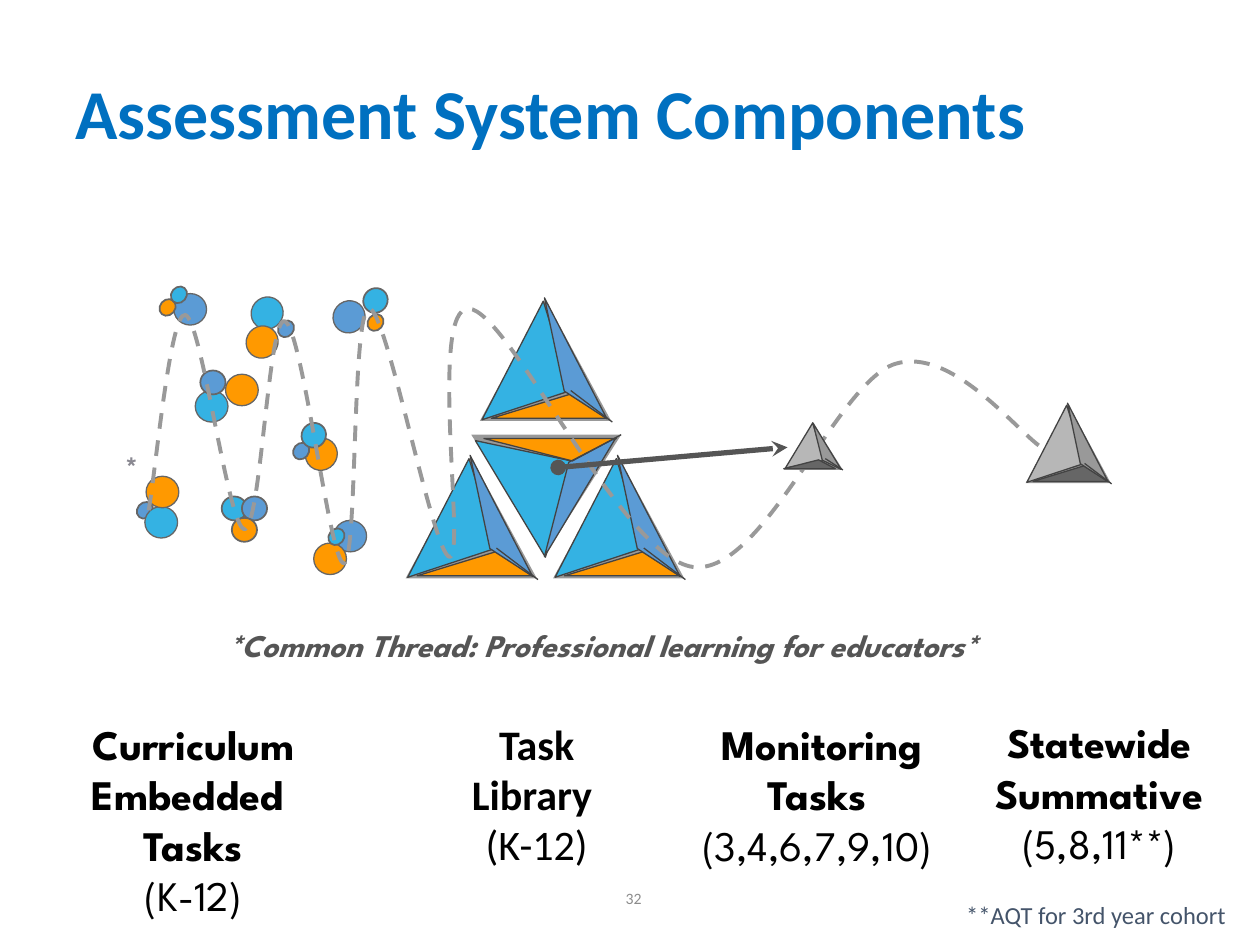
from pptx import Presentation
from pptx.dml.color import RGBColor
from pptx.enum.dml import MSO_LINE
from pptx.enum.shapes import MSO_CONNECTOR, MSO_SHAPE
from pptx.enum.text import MSO_ANCHOR, PP_ALIGN
from pptx.oxml.ns import qn
from pptx.util import Inches, Pt
from lxml.etree import SubElement

BLUE, CYAN, ORANGE = "5B9BD5", "34B2E3", "FF9900"
SILVER, GRAY, DARK, EDGE = "B7B7B7", "999999", "666666", "434343"
SPARTAN, CALIBRI = "League Spartan", "Calibri"

TITLE = "Assessment System Components"
HEADING = dict(size=24, name=SPARTAN, color="000000", bold=True)
PLAIN = dict(HEADING, bold=False)
CALIBRI_HEADING = dict(HEADING, name=CALIBRI)
CALIBRI_PLAIN = dict(PLAIN, name=CALIBRI)
THREAD = dict(size=18, name=SPARTAN, color="555555", bold=True, italic=True)
STAR = dict(size=18, name=SPARTAN, color="8A8992", bold=True)
FOOTNOTE = dict(size=14, name=CALIBRI, color="44546A")
NUMBER = dict(size=9, name=CALIBRI, color="8C8C8C")

# box, inset, alignment, paragraphs of (text, format) runs
NARROW, WIDE = (0.07, 0.04), (0.1, 0.1)
CENTER, LEFT, RIGHT = PP_ALIGN.CENTER, PP_ALIGN.LEFT, PP_ALIGN.RIGHT
TEXTS = [
    ((0.09, 5.66, 2.89, 1.79), NARROW, CENTER,
     [[("Curriculum Embedded ", HEADING)], [("Tasks", HEADING)], [("(K-12)", PLAIN)]]),
    ((3.15, 5.66, 2.22, 1.3), NARROW, CENTER,
     [[("Task", CALIBRI_HEADING)], [("Library ", CALIBRI_HEADING)],
      [("(K-12)", CALIBRI_PLAIN)]]),
    ((5.21, 5.66, 2.55, 1.79), NARROW, CENTER,
     [[(" ", CALIBRI_HEADING), ("Monitoring Tasks", HEADING)],
      [("(3,4,6,7,9,10)", PLAIN)]]),
    ((7.66, 5.65, 2.13, 1.3), NARROW, CENTER,
     [[("Statewide Summative ", HEADING), ("(5,8,11**)", PLAIN)]]),
    ((1.3, 4.93, 6.97, 0.76), NARROW, CENTER,
     [[("*Common Thread: Professional learning for educators*", THREAD)]]),
    ((0.81, 3.46, 0.47, 0.46), WIDE, CENTER, [[("*", STAR)]]),
    ((7.57, 7.04, 2.41, 0.35), WIDE, LEFT, [[("**AQT for 3rd year cohort", FOOTNOTE)]]),
    ((2.94, 6.98, 2.25, 0.35), WIDE, RIGHT, [[("32", NUMBER)]]),
]

# width, height, outline
BIG, MEDIUM, SMALL = (0.26, 0.25, 0.75), (0.2, 0.19, 1), (0.14, 0.12, 1)
UPRIGHT_DOTS = [
    (2.65, 4.13, BIG, BLUE), (2.49, 4.31, BIG, ORANGE), (1.38, 2.33, BIG, BLUE),
]
TURNED_DOTS = [
    (2.42, 3.48, BIG, ORANGE), (2.32, 3.52, SMALL, BLUE), (2.39, 3.36, MEDIUM, CYAN),
    (2.88, 2.29, MEDIUM, CYAN), (1.99, 2.36, BIG, CYAN), (1.95, 2.59, BIG, ORANGE),
    (2.64, 2.39, BIG, BLUE), (1.26, 2.38, SMALL, ORANGE), (2.2, 2.55, SMALL, BLUE),
    (1.35, 2.28, SMALL, CYAN), (2.91, 2.5, SMALL, ORANGE), (1.08, 3.99, SMALL, BLUE),
    (2.6, 4.2, SMALL, CYAN),
]
FRONT_DOTS = [
    (1.15, 4.02, BIG, CYAN), (1.16, 3.78, BIG, ORANGE), (1.76, 3.94, MEDIUM, CYAN),
    (1.92, 3.94, MEDIUM, BLUE), (1.84, 4.11, MEDIUM, ORANGE), (1.79, 2.97, BIG, ORANGE),
    (1.55, 3.1, BIG, CYAN), (1.59, 2.94, MEDIUM, BLUE),
]

# triangles: x, y, width, height, rotation, flipped, apex, role; ridge: two points
TASK_PYRAMID = dict(
    triangles=[(0, 0, 1.04, 0.96, 0, False, 0.5, "shadow"),
               (-0.04, 0.34, 1.06, 0.52, 117.3, False, 0.5, "face"),
               (0.09, 0.75, 0.92, 0.19, 0, False, 0.675, "base"),
               (0.13, 0.41, 1.08, 0.2, 242.7, True, 0.675, "side")],
    ridge=(0.72, 0.72, 1.05, 0.97))
INVERTED_PYRAMID = dict(
    triangles=[(0, 0, 1.19, 0.94, 180, True, 0.5, "shadow"),
               (0.02, 0.07, 1.08, 0.58, 59, True, 0.5, "face"),
               (0.1, 0.03, 1.05, 0.18, 180, True, 0.675, "base"),
               (0.22, 0.33, 1.1, 0.22, 301, False, 0.675, "side")],
    ridge=(0.8, 0.21, 1.19, 0))
MONITORING_PYRAMID = dict(
    triangles=[(0, 0, 0.47, 0.37, 0, False, 0.5, "shadow"),
               (0.01, 0.12, 0.42, 0.23, 121.2, False, 0.5, "face"),
               (0, 0.29, 0.41, 0.07, 0, False, 0.675, "base"),
               (0.09, 0.16, 0.43, 0.09, 238.7, True, 0.675, "side")],
    ridge=(0.33, 0.28, 0.47, 0.37))
COLORFUL = dict(shadow=GRAY, face=CYAN, base=ORANGE, side=BLUE)
GRAYSCALE = dict(shadow=GRAY, face=SILVER, base=DARK, side=GRAY)

# start, then (control, control, end) per bend
THREAD_CURVE = [
    (1.18, 4.05),
    (1.23, 3.79), (1.35, 2.47), (1.47, 2.5), (1.6, 2.52), (1.81, 4.19), (1.94, 4.2),
    (2.07, 4.21), (2.13, 2.5), (2.26, 2.55), (2.4, 2.59), (2.62, 4.49), (2.73, 4.47),
    (2.84, 4.46), (2.79, 2.46), (2.93, 2.45), (3.07, 2.44), (3.44, 4.42), (3.57, 4.42),
    (3.7, 4.42), (3.4, 2.44), (3.72, 2.45), (4.04, 2.46), (4.93, 4.42), (5.5, 4.5),
    (6.06, 4.57), (6.63, 3.05), (7.1, 2.89), (7.56, 2.74), (8.09, 3.45), (8.28, 3.56),
]


def rgb(value):
    return RGBColor.from_string(value)


def inches(values):
    return [Inches(value) for value in values]


def set_line(shape, color, width):
    shape.line.color.rgb = rgb(color)
    shape.line.width = Pt(width)


def set_font(font, format_values):
    for key, value in format_values.items():
        if key == "color":
            font.color.rgb = rgb(value)
        else:
            setattr(font, key, Pt(value) if key == "size" else value)


def add_filled(slide, kind, box, fill, rotation=0, outline=None):
    shape = slide.shapes.add_shape(kind, *inches(box))
    shape.shadow.inherit = False
    shape.rotation = rotation
    shape.fill.solid()
    shape.fill.fore_color.rgb = rgb(fill)
    if outline:
        set_line(shape, *outline)
    else:
        shape.line.fill.background()
    return shape


def add_line(slide, points, color, width):
    line = slide.shapes.add_connector(MSO_CONNECTOR.STRAIGHT, *inches(points))
    SubElement(line._element.spPr, qn("a:effectLst"))
    set_line(line, color, width)
    return line


def add_dots(slide, dots, rotation=0):
    for x, y, (width, height, outline), color in dots:
        add_filled(slide, MSO_SHAPE.OVAL, (x, y, width, height), color, rotation,
                   (DARK, outline))


def add_pyramid(slide, left, top, pyramid, colors, scale=1):
    for x, y, w, h, rotation, flipped, apex, role in pyramid["triangles"]:
        box = (left + x * scale, top + y * scale, w * scale, h * scale)
        outline = None if role == "shadow" else (EDGE, 0.75)
        shape = add_filled(slide, MSO_SHAPE.ISOSCELES_TRIANGLE, box, colors[role],
                           rotation, outline)
        shape.adjustments[0] = apex
        if flipped:
            shape._element.spPr.find(qn("a:xfrm")).set("flipH", "1")
    x1, y1, x2, y2 = (value * scale for value in pyramid["ridge"])
    add_line(slide, (left + x1, top + y1, left + x2, top + y2), EDGE, 0.75)


def add_thread(slide):
    """Draw the dashed curve, turning each three straight steps into one Bezier bend."""
    start, *points = [inches(point) for point in THREAD_CURVE]
    builder = slide.shapes.build_freeform(*start)
    builder.add_line_segments(points, close=False)
    curve = builder.convert_to_shape()
    curve.shadow.inherit = False
    curve.fill.background()
    set_line(curve, GRAY, 2.25)
    curve.line.dash_style = MSO_LINE.DASH
    outline = next(curve._element.iter(qn("a:path")))
    steps = outline.findall(qn("a:lnTo"))
    for i in range(0, len(steps), 3):
        bend = SubElement(outline, qn("a:cubicBezTo"))
        for step in steps[i:i + 3]:
            bend.append(step[0])
            outline.remove(step)


def add_text(slide, box, inset, alignment, paragraphs):
    frame = slide.shapes.add_textbox(*inches(box)).text_frame
    frame.word_wrap = True
    frame.margin_left = frame.margin_right = Inches(inset[0])
    frame.margin_top = frame.margin_bottom = Inches(inset[1])
    for i, runs in enumerate(paragraphs):
        paragraph = frame.add_paragraph() if i else frame.paragraphs[0]
        paragraph.alignment = alignment
        for text, format_values in runs:
            run = paragraph.add_run()
            run.text = text
            set_font(run.font, format_values)


def add_title(slide):
    title = slide.shapes.title
    title.left, title.top, title.width, title.height = inches((0.5, 0.3, 9, 1.25))
    title.text_frame.text = TITLE
    title.text_frame.vertical_anchor = MSO_ANCHOR.MIDDLE
    paragraph = title.text_frame.paragraphs[0]
    paragraph.alignment = LEFT
    paragraph.line_spacing = 0.9
    set_font(paragraph.runs[0].font, dict(size=40, name=CALIBRI, color="0070C0", bold=True))


def main():
    prs = Presentation()
    prs.slide_width, prs.slide_height = inches((10, 7.5))
    slide = prs.slides.add_slide(prs.slide_layouts[5])
    add_title(slide)
    for text in TEXTS:
        add_text(slide, *text)
    add_dots(slide, UPRIGHT_DOTS)
    add_dots(slide, TURNED_DOTS, 130)
    add_dots(slide, FRONT_DOTS)
    add_pyramid(slide, 3.74, 3.45, INVERTED_PYRAMID, COLORFUL)
    for left, top in [(3.22, 3.63), (4.39, 3.63), (3.81, 2.38)]:
        add_pyramid(slide, left, top, TASK_PYRAMID, COLORFUL)
    add_pyramid(slide, 8.14, 3.21, TASK_PYRAMID, GRAYSCALE, 0.65)
    add_thread(slide)
    add_pyramid(slide, 6.22, 3.36, MONITORING_PYRAMID, GRAYSCALE)
    arrow = add_line(slide, (4.43, 3.71, 6.25, 3.55), "555555", 3)
    for end, kind in [("a:headEnd", "oval"), ("a:tailEnd", "stealth")]:
        SubElement(arrow.line._get_or_add_ln(), qn(end), type=kind)
    prs.save("out.pptx")


if __name__ == "__main__":
    main()
